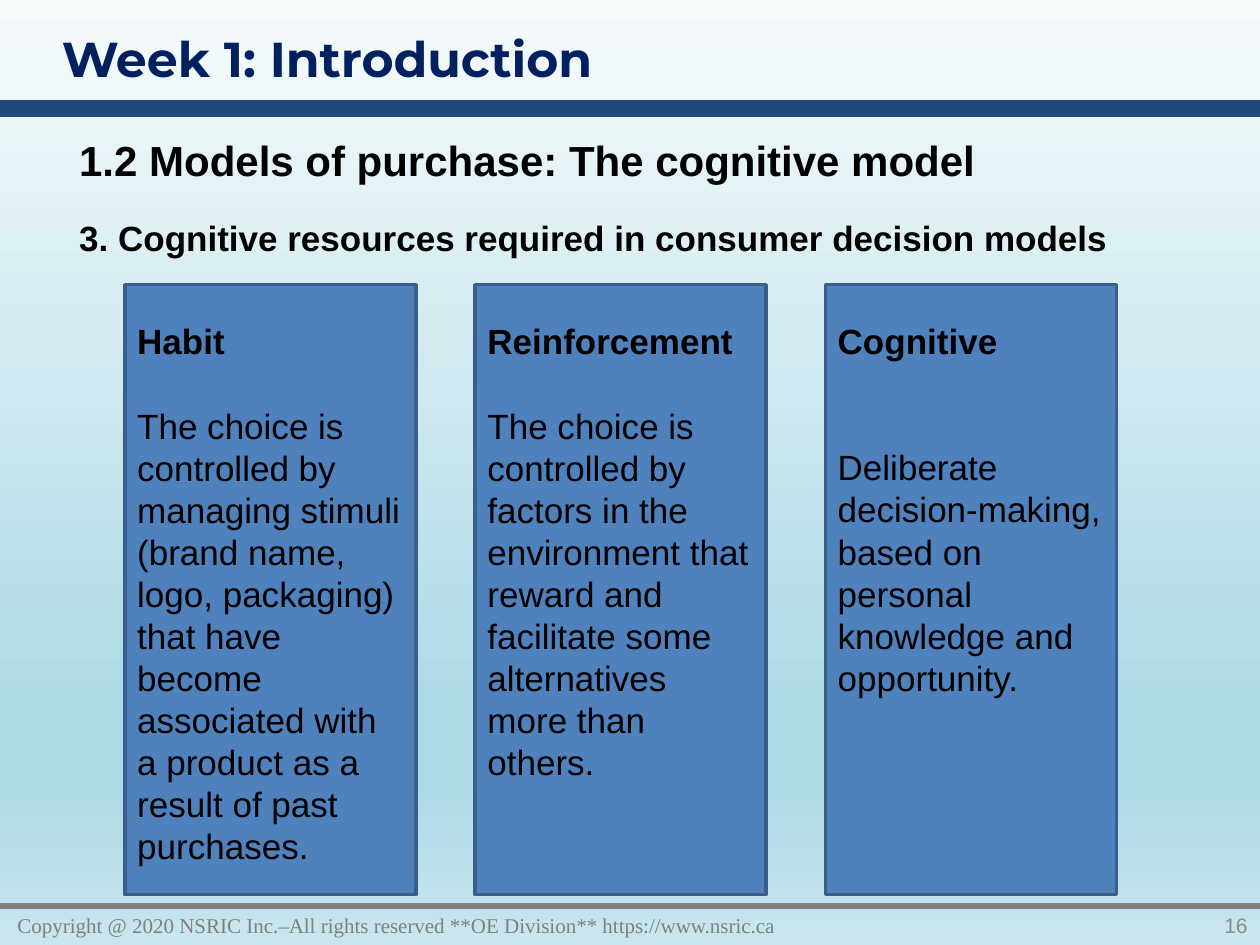
from lxml import etree
from pptx import Presentation
from pptx.dml.color import RGBColor
from pptx.enum import shapes, text
from pptx.oxml.ns import qn
from pptx.util import Inches, Pt

COLORS = {
    "title": "002060", "text": "000000", "footer": "808080", "number": "8C8C8C",
    "header_rule": "1F497D", "footer_rule": "808080",
    "card": "4F81BD", "card_line": "3A5F8C",
}
BACKGROUND_STOPS = [(0, "F6FBFC"), (74, "AEDAE5"), (83, "AEDAE5"), (100, "C9E6EE")]

# Heading, body, space between them in points
CARDS = [
    ("Habit", "The choice is controlled by managing stimuli (brand name, logo, packaging) "
     "that have become associated with a product as a result of past purchases.", 24),
    ("Reinforcement", "The choice is controlled by factors in the environment that reward "
     "and facilitate some alternatives more than others.", 24),
    ("Cognitive", "Deliberate decision-making, based on personal knowledge and "
     "opportunity.", 48),
]
CARD_LEFT, CARD_STEP = 0.99, 2.78


def rgb(name):
    return RGBColor.from_string(COLORS[name])


def set_background(s):
    fill = s.background.fill
    fill.gradient()
    fill.gradient_angle = 270
    stops = s._element.find(".//" + qn("a:gsLst"))
    for stop in list(stops):
        stops.remove(stop)
    for percent, color in BACKGROUND_STOPS:
        stop = etree.SubElement(stops, qn("a:gs"), pos=str(percent * 1000))
        etree.SubElement(stop, qn("a:srgbClr"), val=color)


def write(p, content, size=20, font="Arial", color="text", bold=False,
          align=text.PP_ALIGN.LEFT, before=0, spacing=None):
    p.alignment = align
    p.space_before = Pt(before)
    if spacing:
        p.line_spacing = Pt(spacing)
    r = p.add_run()
    r.text = content
    r.font.size, r.font.name, r.font.bold = Pt(size), font, bold
    r.font.color.rgb = rgb(color)


def add_text(s, box, content, anchor=text.MSO_ANCHOR.TOP, **style):
    tf = s.shapes.add_textbox(*map(Inches, box)).text_frame
    tf.word_wrap = True
    tf.vertical_anchor = anchor
    write(tf.paragraphs[0], content, **style)


def add_title(s, content):
    sp = s.shapes.title
    sp.left, sp.top, sp.width, sp.height = map(Inches, (0.39, 0.18, 6.95, 0.57))
    tf = sp.text_frame
    tf.vertical_anchor = text.MSO_ANCHOR.TOP
    write(tf.paragraphs[0], content, size=28, font="Montserrat", color="title", bold=True)


def add_rule(s, y, color, width):
    """Draw a line across the whole slide."""
    line = s.shapes.add_connector(shapes.MSO_CONNECTOR.STRAIGHT,
                                  Inches(0), Inches(y), Inches(10), Inches(y))
    line.line.color.rgb = rgb(color)
    line.line.width = Pt(width)
    etree.SubElement(line._element.spPr, qn("a:effectLst"))


def add_card(s, left, heading, body, gap):
    sp = s.shapes.add_shape(shapes.MSO_SHAPE.FLOWCHART_PROCESS, Inches(left),
                            Inches(2.26), Inches(2.31), Inches(4.84))
    sp.shadow.inherit = False
    sp.fill.solid()
    sp.fill.fore_color.rgb = rgb("card")
    sp.line.color.rgb = rgb("card_line")
    sp.line.width = Pt(2)
    tf = sp.text_frame
    tf.word_wrap = True
    tf.vertical_anchor = text.MSO_ANCHOR.TOP
    tf.margin_top = Inches(0.28)
    write(tf.paragraphs[0], heading, bold=True, spacing=24)
    write(tf.add_paragraph(), body, before=gap, spacing=24)


def main():
    prs = Presentation()
    prs.slide_width, prs.slide_height = Inches(10), Inches(7.5)
    s = prs.slides.add_slide(prs.slide_layouts[5])
    set_background(s)
    add_rule(s, 0.86, "header_rule", 10)
    add_rule(s, 7.19, "footer_rule", 3)
    add_title(s, "Week 1: Introduction")

    middle = text.MSO_ANCHOR.MIDDLE
    add_text(s, (0.04, 7.19, 8.27, 0.31),
             "Copyright @ 2020 NSRIC Inc.–All rights reserved **OE Division** "
             "https://www.nsric.ca",
             anchor=middle, size=12, font="Times New Roman", color="footer")
    add_text(s, (8.59, 7.19, 1.41, 0.31), "16", anchor=middle, size=12,
             color="number", align=text.PP_ALIGN.RIGHT)
    add_text(s, (0.53, 1.02, 9.19, 1.31), "1.2 Models of purchase: The cognitive model",
             size=24, bold=True)
    add_text(s, (0.53, 1.67, 8.78, 3.13),
             "3. Cognitive resources required in consumer decision models",
             bold=True, align=text.PP_ALIGN.JUSTIFY)

    for i, card in enumerate(CARDS):
        add_card(s, CARD_LEFT + i * CARD_STEP, *card)
    prs.save("out.pptx")


if __name__ == "__main__":
    main()
